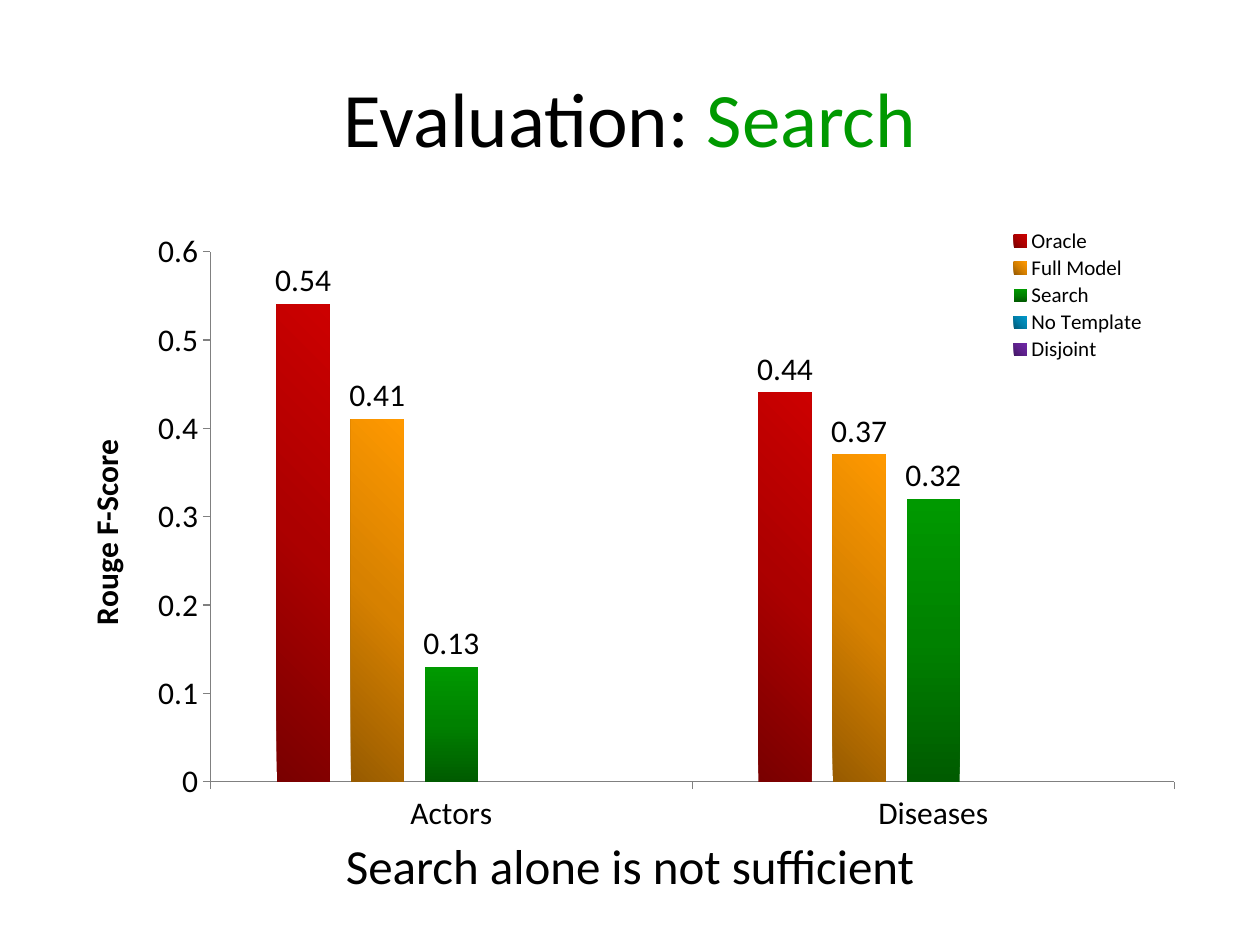
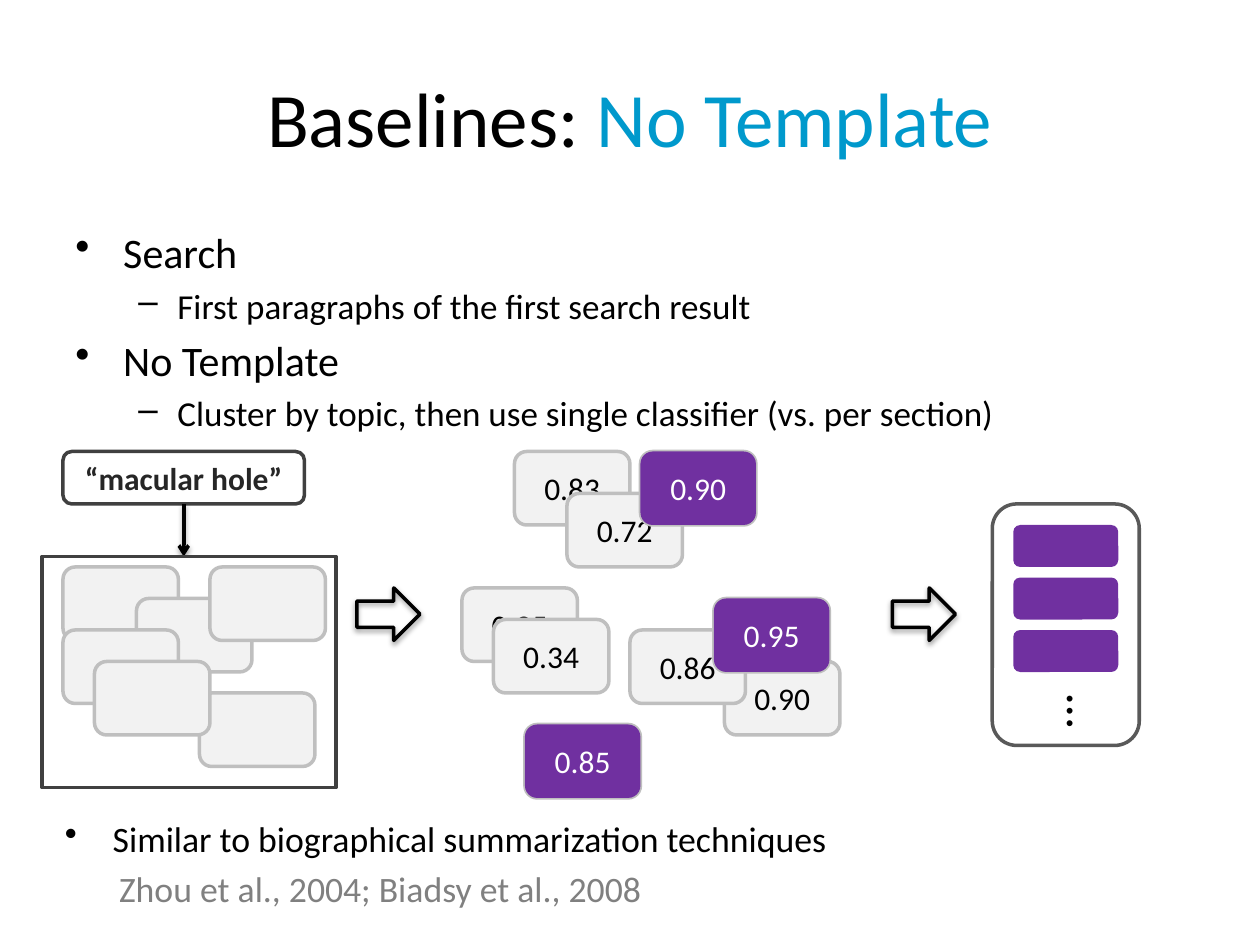
import copy
import dataclasses

import lxml.etree
import pptx
import pptx.chart.data
import pptx.dml.color
import pptx.enum.chart
import pptx.enum.shapes
import pptx.enum.text
import pptx.oxml.ns
import pptx.util

RGB = pptx.dml.color.RGBColor
BLACK = RGB(0x00, 0x00, 0x00)
WHITE = RGB(0xFF, 0xFF, 0xFF)
INK = RGB(0x26, 0x26, 0x26)
FRAME = RGB(0x40, 0x40, 0x40)
OUTLINE = RGB(0x59, 0x59, 0x59)
GRAY = RGB(0x80, 0x80, 0x80)
CARD_LINE = RGB(0xBF, 0xBF, 0xBF)
CARD_FILL = RGB(0xF2, 0xF2, 0xF2)
PURPLE = RGB(0x70, 0x30, 0xA0)
GREEN = RGB(0x00, 0x99, 0x00)
CYAN = RGB(0x00, 0x99, 0xCC)

FONT = "Calibri"
CELL = pptx.util.Inches(1) // 12
CARD_SIZE = (11, 7)
SHAPE = pptx.enum.shapes.MSO_SHAPE
CENTER = pptx.enum.text.PP_ALIGN.CENTER
MIDDLE = pptx.enum.text.MSO_ANCHOR.MIDDLE
qn = pptx.oxml.ns.qn

SCORES = [
    ("Oracle", (0.54, 0.44), ("790000", "AC0000", "CC0000"), 45),
    ("Full Model", (0.41, 0.37), ("975B00", "D78100", "FF9900"), 45),
    ("Search", (0.13, 0.32), ("005B00", "008100", "009900"), 90),
    ("No Template", (None, None), ("005B79", "0081AC", "0099CC"), 45),
    ("Disjoint", (None, None), ("431764", "5F218E", "7128A8"), 45),
]
SEARCH_RESULTS = [(2, 1), (9, 4), (2, 7), (16, 1), (15, 13), (5, 10)]
CLUSTERED = [
    ("0.83", 5, 0), ("0.72", 10, 4), ("0.25", 0, 13),
    ("0.90", 17, 0), ("0.90", 25, 20), ("0.85", 6, 26),
    ("0.86", 16, 17), ("0.95", 24, 14), ("0.34", 3, 16),
]
BEST = [("0.90", 17, 0), ("0.85", 6, 26), ("0.95", 24, 14)]


@dataclasses.dataclass
class Box:
    """An area in cells of a grid of 120 columns and 90 rows."""
    col: float
    row: float
    cols: float
    rows: float

    def inner(self, col, row, cols, rows):
        """Return an area offset from this one."""
        return Box(self.col + col, self.row + row, cols, rows)

    def emu(self):
        """Return left, top, width and height as lengths."""
        return [round(n * CELL) for n in (self.col, self.row, self.cols, self.rows)]


TITLE_BOX = Box(6, 3.6, 108, 15)
BODY_BOX = Box(6, 21, 108, 59.4)


def write(frame, *runs, size=18, color=BLACK, bold=False, align=None,
          bullet=None, margin=0, hanging=0, line=None, before=0):
    """Add one paragraph of runs, each a text or a (text, colour) pair."""
    paragraph = frame.add_paragraph() if frame.text else frame.paragraphs[0]
    paragraph.alignment = align
    paragraph.space_before = pptx.util.Pt(before)
    if line:
        paragraph.line_spacing = line
    properties = paragraph._p.get_or_add_pPr()
    properties.set("marL", str(pptx.util.Inches(margin)))
    properties.set("indent", str(-pptx.util.Inches(hanging)))
    if bullet:
        lxml.etree.SubElement(properties, qn("a:buChar")).set("char", bullet)
    for item in runs:
        text, tint = (item, color) if isinstance(item, str) else item
        run = paragraph.add_run()
        run.text = text
        set_font(run.font, size, bold)
        run.font.color.rgb = tint


def set_font(font, size, bold=False):
    """Set the shared typeface with a size and weight."""
    font.name, font.size, font.bold = FONT, pptx.util.Pt(size), bold


def add_text_box(shapes, box):
    """Add a wrapping text box and return its frame."""
    frame = shapes.add_textbox(*box.emu()).text_frame
    frame.word_wrap = True
    return frame


def add_block(shapes, box, kind=SHAPE.ROUNDED_RECTANGLE, fill=None, line=None,
              text=None, **style):
    """Add a flat shape with optional fill, outline and centred text."""
    block = shapes.add_shape(kind, *box.emu())
    block.shadow.inherit = False
    if fill is None:
        block.fill.background()
    else:
        block.fill.solid()
        block.fill.fore_color.rgb = fill
    if line is None:
        block.line.fill.background()
    else:
        block.line.color.rgb = line
        block.line.width = pptx.util.Pt(2)
    if text:
        block.text_frame.vertical_anchor = MIDDLE
        write(block.text_frame, text, align=CENTER, **style)
    return block


def add_shadow(properties):
    """Give shape properties a soft shadow below."""
    shadow = lxml.etree.SubElement(properties.get_or_add_effectLst(), qn("a:outerShdw"),
                                   blurRad="39370", dist="20320", dir="5400000", rotWithShape="0")
    tint = lxml.etree.SubElement(shadow, qn("a:srgbClr"), val="000000")
    lxml.etree.SubElement(tint, qn("a:alpha"), val="38000")


def add_title(slide, topic, subject, color):
    """Place the title with its coloured subject."""
    frame = add_text_box(slide.shapes, TITLE_BOX)
    frame.vertical_anchor = MIDDLE
    write(frame, topic, (subject, color), size=44, align=CENTER)


def set_layout(element, plot=False, **shares):
    """Fix a region of the chart at shares of the chart's size."""
    for old in element.findall(qn("c:layout")):
        element.remove(old)
    layout = lxml.etree.SubElement(element, qn("c:layout"))
    manual = lxml.etree.SubElement(layout, qn("c:manualLayout"))
    settings = {"layoutTarget": "inner"} if plot else {}
    settings |= {"xMode": "edge", "yMode": "edge", **shares}
    for name, value in settings.items():
        lxml.etree.SubElement(manual, qn(f"c:{name}")).set("val", str(value))
    element.insert(0 if plot else 1, layout)


def paint_series(series, colors, angle):
    """Fill a series with a three-stop gradient and label its values."""
    fill = series.format.fill
    fill.gradient()
    fill.gradient_angle = angle
    stops = series._element.xpath(".//a:gsLst")[0]
    stops.append(copy.deepcopy(stops[0]))
    for stop, color, position in zip(fill.gradient_stops, colors, (0, 0.5, 1)):
        stop.color.rgb = RGB.from_string(color)
        stop.position = position
    labels = series.data_labels
    labels.show_value = True
    labels.position = pptx.enum.chart.XL_LABEL_POSITION.OUTSIDE_END
    set_font(labels.font, 18)


def add_score_chart(slide, box):
    """Place the chart of scores by domain."""
    data = pptx.chart.data.CategoryChartData()
    data.categories = ["Actors", "Diseases"]
    for name, values, _, _ in SCORES:
        data.add_series(name, values)
    chart = slide.shapes.add_chart(
        pptx.enum.chart.XL_CHART_TYPE.COLUMN_CLUSTERED, *box.emu(), data).chart
    set_font(chart.font, 18)
    chart.font.color.rgb = BLACK
    chart.has_title = False
    plot = chart.plots[0]
    plot.gap_width, plot.overlap, plot.vary_by_categories = 250, -40, False
    for series, (_, _, colors, angle) in zip(plot.series, SCORES):
        paint_series(series, colors, angle)

    for axis in (chart.category_axis, chart.value_axis):
        axis.has_major_gridlines = False
        axis.major_tick_mark = pptx.enum.chart.XL_TICK_MARK.OUTSIDE
        axis.format.line.color.rgb = GRAY
        set_font(axis.tick_labels.font, 18)
    scores = chart.value_axis
    scores.minimum_scale, scores.maximum_scale, scores.major_unit = 0, 0.6, 0.1
    write(scores.axis_title.text_frame, "Rouge F-Score", bold=True)

    chart.has_legend = True
    legend = chart.legend
    legend.position = pptx.enum.chart.XL_LEGEND_POSITION.RIGHT
    legend.include_in_layout = False
    set_font(legend.font, 12)
    set_layout(legend._element, x=0.83, y=0.01, w=0.13, h=0.22)
    set_layout(chart._chartSpace.chart.plotArea, plot=True, x=0.13, y=0.05, w=0.85, h=0.85)


def add_query(slide, box):
    """Place the search query and its arrow to the results."""
    query = add_block(slide.shapes, box.inner(0, 0, 23, 5), fill=WHITE, line=FRAME,
                      text="“macular hole”", color=INK, bold=True)
    left, top, _, _ = box.inner(11.5, 5, 0, 0).emu()
    arrow = slide.shapes.add_connector(
        pptx.enum.shapes.MSO_CONNECTOR.STRAIGHT, left, top, left, top + 5 * CELL)
    arrow.begin_connect(query, 2)
    arrow.line.color.rgb = BLACK
    arrow.line.width = pptx.util.Pt(2)
    lxml.etree.SubElement(arrow.get_or_add_ln(), qn("a:tailEnd")).set("type", "arrow")
    add_shadow(arrow._element.spPr)


def add_results(slide, box):
    """Place the panel of unscored search results."""
    shapes = slide.shapes.add_group_shape().shapes
    add_block(shapes, box, kind=SHAPE.RECTANGLE, fill=WHITE, line=FRAME)
    for col, row in SEARCH_RESULTS:
        add_block(shapes, box.inner(col, row, *CARD_SIZE), fill=CARD_FILL, line=CARD_LINE)


def add_scored_cards(slide, box, cards, **style):
    """Place a group of cards that show their scores."""
    shapes = slide.shapes.add_group_shape().shapes
    for score, col, row in cards:
        add_block(shapes, box.inner(col, row, *CARD_SIZE), text=score, **style)


def add_step_arrow(slide, box):
    """Place a hollow arrow between two steps."""
    arrow = add_block(slide.shapes, box, kind=SHAPE.RIGHT_ARROW, line=BLACK)
    add_shadow(arrow._element.spPr)


def add_summary(slide, box):
    """Place the summary sheet with its chosen excerpts."""
    shapes = slide.shapes.add_group_shape().shapes
    add_block(shapes, box, line=OUTLINE)
    for excerpt in range(3):
        add_block(shapes, box.inner(2, 2 + 5 * excerpt, 10, 4), fill=PURPLE)
    more = add_text_box(shapes, box.inner(4.4, 17, 8, 4.4))
    more.word_wrap = False
    more._txBody.bodyPr.set("vert", "vert")
    write(more, "…", size=28)


def add_baselines(slide, box):
    """Place the list of baselines."""
    frame = add_text_box(slide.shapes, box)
    for name, detail in [
        ("Search", "First paragraphs of the first search result"),
        ("No Template", "Cluster by topic, then use single classifier (vs. per section)"),
    ]:
        write(frame, name, size=24, bullet="•", margin=0.38, hanging=0.38, before=4.8)
        write(frame, detail, size=20, bullet="–", margin=0.81, hanging=0.31, before=4)


def add_related_work(slide, box):
    """Place the note on similar techniques with its citation."""
    frame = add_text_box(slide.shapes, box)
    write(frame, "Similar to biographical summarization techniques", size=20.4,
          bullet="•", margin=0.38, hanging=0.38, line=0.8, before=4)
    write(frame, "Zhou et al., 2004; Biadsy et al., 2008", size=20.4, color=GRAY,
          margin=0.43, before=4)


def build_evaluation(slide):
    """Build the slide on the search score."""
    add_title(slide, "Evaluation: ", "Search", GREEN)
    add_score_chart(slide, BODY_BOX)
    write(add_text_box(slide.shapes, Box(6, 79, 108, 8)), "Search alone is not sufficient",
          size=28, align=CENTER, margin=0.38, hanging=0.38, before=5.6)


def build_baselines(slide):
    """Build the slide on the baseline without template."""
    clusters = Box(44, 43, 36, 33)
    add_title(slide, "Baselines: ", "No Template", CYAN)
    add_baselines(slide, BODY_BOX)
    add_query(slide, Box(6, 43, 23, 10))
    add_results(slide, Box(4, 53, 28, 22))
    add_scored_cards(slide, clusters, CLUSTERED, fill=CARD_FILL, line=CARD_LINE)
    for col in (34, 85):
        add_step_arrow(slide, Box(col, 56, 6, 5))
    add_scored_cards(slide, clusters, BEST, fill=PURPLE, color=WHITE)
    add_related_work(slide, Box(5, 78, 108, 9))
    add_summary(slide, Box(94.5, 48, 14, 23))


def main():
    """Build and save the presentation."""
    deck = pptx.Presentation()
    deck.slide_width, deck.slide_height = 120 * CELL, 90 * CELL
    for build in (build_evaluation, build_baselines):
        build(deck.slides.add_slide(deck.slide_layouts[6]))
    deck.save("out.pptx")


if __name__ == "__main__":
    main()
